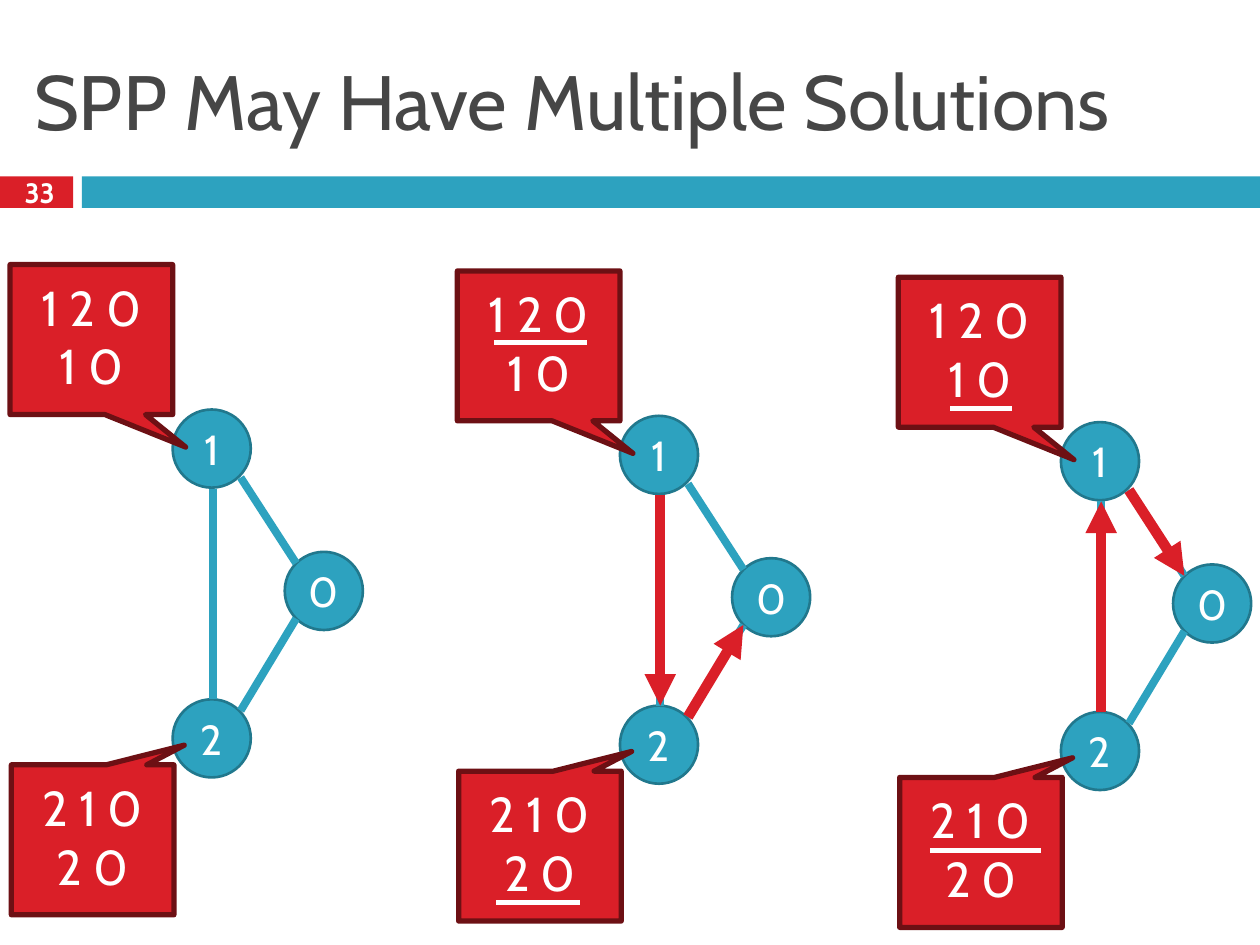
import pptx
import pptx.util
import pptx.dml.color
import pptx.enum.shapes
import pptx.enum.text
import pptx.oxml.ns
import lxml.etree

Inches = pptx.util.Inches
RGBColor = pptx.dml.color.RGBColor
Shape = pptx.enum.shapes.MSO_SHAPE
Align = pptx.enum.text.PP_ALIGN
Anchor = pptx.enum.text.MSO_ANCHOR
qn = pptx.oxml.ns.qn

FONT = "Cabin"
RED = RGBColor(0xDA, 0x1F, 0x28)
MAROON = RGBColor(0x6D, 0x10, 0x14)
BLUE = RGBColor(0x2D, 0xA2, 0xBF)
NAVY = RGBColor(0x21, 0x78, 0x8D)
GRAY = RGBColor(0x46, 0x46, 0x46)
WHITE = RGBColor(0xFF, 0xFF, 0xFF)

NODES = {"0": (2.18, 2.28), "1": (1.29, 1.15), "2": (1.29, 3.45)}
ENDS = {
    "10": (1.83, 1.69), "01": (2.27, 2.37),
    "12": (1.61, 1.78), "21": (1.61, 3.45),
    "20": (1.83, 3.54), "02": (2.27, 2.81),
}
CALLS = [
    (0, 0, ["1 2 0", "1 0"], (0.58, 0.717)),
    (0.01, 3.97, ["2 1 0", "2 0"], (0.564, -0.631)),
]
PANELS = [
    (0.08, 2.1, [], []),
    (3.63, 2.15, ["12", "20"], [(0.29, 1.03, 0.57), (0.31, 0.97, 5.01)]),
    (7.13, 2.2, ["21", "10"], [(0.41, 0.9, 1.04), (0.25, 1.13, 4.55)]),
]


def write(frame, lines, size, color, align=Align.CENTER, bold=False):
    """Fill a text frame with one paragraph per line."""
    frame.text = "\n".join(lines)
    frame.word_wrap = True
    for para in frame.paragraphs:
        para.alignment = align
        for run in para.runs:
            run.font.name = FONT
            run.font.size = pptx.util.Pt(size)
            run.font.bold = bold
            run.font.color.rgb = color


def block(shapes, kind, box, fill, edge=None, width=0):
    """Add a filled preset shape in a box of inches."""
    shape = shapes.add_shape(kind, *map(Inches, box))
    shape.shadow.inherit = False
    shape.fill.solid()
    shape.fill.fore_color.rgb = fill
    if edge is None:
        shape.line.fill.background()
    else:
        shape.line.color.rgb = edge
        shape.line.width = pptx.util.Pt(width)
    return shape


def link(shapes, start, end, color, width, arrow=False):
    """Draw a straight line, with an arrowhead at its end if asked."""
    kind = pptx.enum.shapes.MSO_CONNECTOR.STRAIGHT
    line = shapes.add_connector(kind, *map(Inches, (*start, *end)))
    line.line.color.rgb = color
    line.line.width = pptx.util.Pt(width)
    props = line.element.spPr
    if arrow:
        lxml.etree.SubElement(props.find(qn("a:ln")), qn("a:tailEnd"), type="triangle")
    lxml.etree.SubElement(props, qn("a:effectLst"))


def header(slide, box):
    """Place the title, the slide number and the two bars."""
    left, top, width, height = box
    bar = top + height - 0.25
    block(slide.shapes, Shape.RECTANGLE, (left, bar, 0.58, 0.25), RED)
    block(slide.shapes, Shape.RECTANGLE, (left + 0.65, bar, width - 0.65, 0.25), BLUE)
    page = slide.shapes.add_textbox(*map(Inches, (left - 0.01, bar - 0.02, 0.65, 0.29)))
    write(page.text_frame, ["33"], 16, WHITE, bold=True)
    page.text_frame.vertical_anchor = Anchor.MIDDLE
    title = slide.shapes.title
    title.left, title.top = Inches(left + 0.17), Inches(top)
    title.width, title.height = Inches(9.67), Inches(1.08)
    write(title.text_frame, ["SPP May Have Multiple Solutions"], 44, GRAY, Align.LEFT)
    title.text_frame.vertical_anchor = Anchor.MIDDLE
    title.text_frame.auto_size = pptx.enum.text.MSO_AUTO_SIZE.NONE


def callout(slide, left, top, lines, tip):
    """Place a grouped callout that lists the paths of a node."""
    group = slide.shapes.add_group_shape()
    box = (left, top, 1.29, 1.19)
    shape = block(group.shapes, Shape.RECTANGULAR_CALLOUT, box, RED, MAROON, 3)
    shape.adjustments[0], shape.adjustments[1] = tip
    text = group.shapes.add_textbox(*map(Inches, (left, top + 0.05, 1.29, 1.04)))
    write(text.text_frame, lines, 28, WHITE)


def panel(slide, left, top, hops, rules):
    """Place one graph with its callouts, chosen hops and underlines."""
    shapes = slide.shapes

    def edge(pair, *style):
        """Link the two nodes named by a pair."""
        ends = [(left + x, top + y) for x, y in (ENDS[pair], ENDS[pair[::-1]])]
        link(shapes, *ends, *style)

    for name, (x, y) in NODES.items():
        box = (left + x, top + y, 0.62, 0.62)
        node = block(shapes, Shape.OVAL, box, BLUE, NAVY, 1.5)
        write(node.text_frame, [name], 24, WHITE)
        node.text_frame.vertical_anchor = Anchor.MIDDLE
    for pair in ("10", "12", "20"):
        edge(pair, BLUE, 4.5)
    for x, y, lines, tip in CALLS:
        callout(slide, left + x, top + y, lines, tip)
    for pair in hops:
        edge(pair, RED, 6, True)
    for start, end, y in rules:
        link(shapes, (left + start, top + y), (left + end, top + y), WHITE, 3)


def main():
    """Build and save the slide."""
    deck = pptx.Presentation()
    deck.slide_width, deck.slide_height = Inches(10), Inches(7.5)
    slide = deck.slides.add_slide(deck.slide_layouts[5])
    header(slide, (0, 0.25, 10, 1.4))
    for left, top, hops, rules in PANELS:
        panel(slide, left, top, hops, rules)
    deck.save("out.pptx")


if __name__ == "__main__":
    main()
